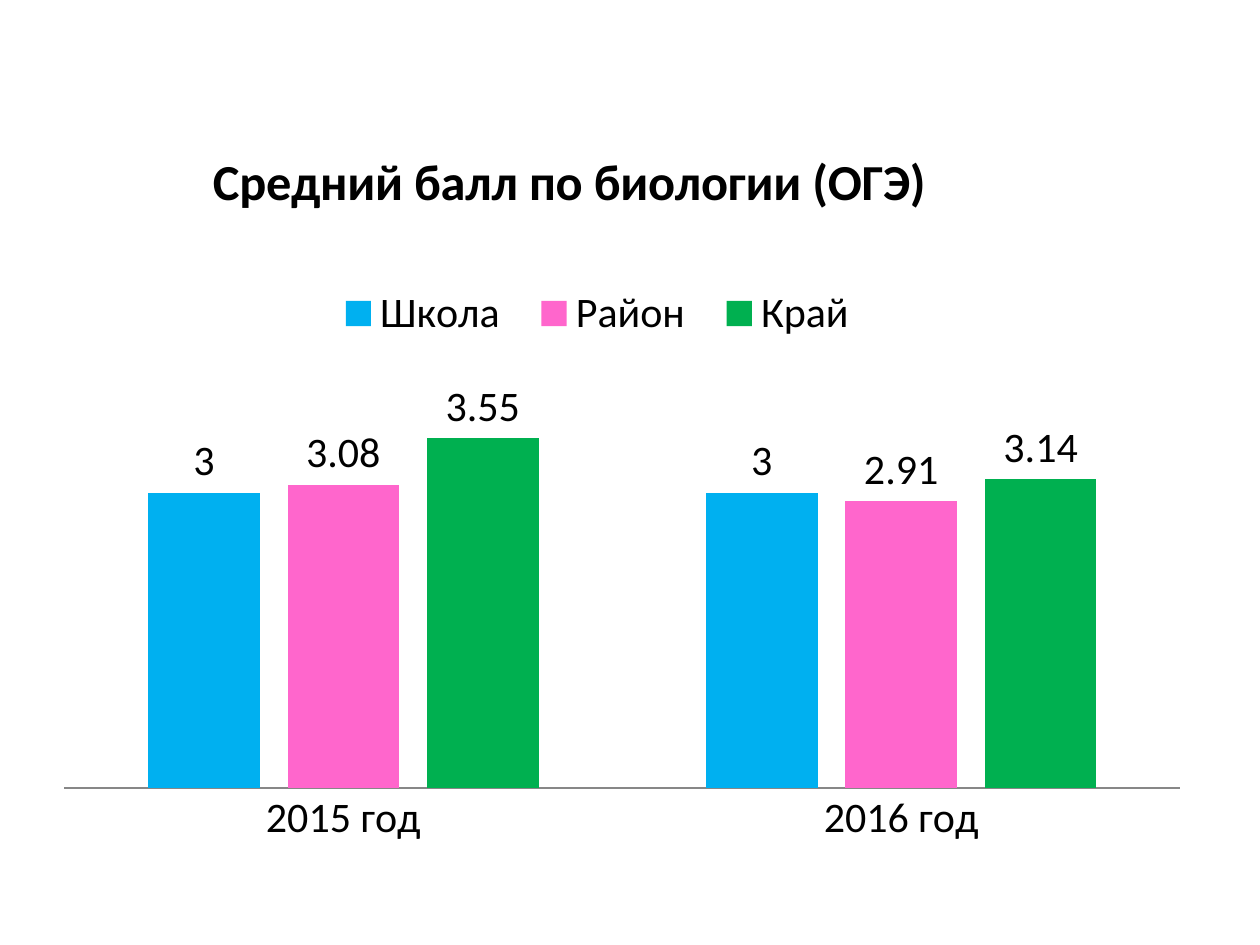
from dataclasses import dataclass

from pptx import Presentation
from pptx.chart.data import CategoryChartData
from pptx.dml.color import RGBColor
from pptx.enum.chart import XL_CHART_TYPE, XL_LABEL_POSITION, XL_LEGEND_POSITION, XL_TICK_MARK
from pptx.oxml import parse_xml
from pptx.oxml.ns import nsdecls
from pptx.util import Emu, Pt

COLUMNS = XL_CHART_TYPE.COLUMN_CLUSTERED
LABEL_ABOVE = XL_LABEL_POSITION.OUTSIDE_END
LEGEND_TOP = XL_LEGEND_POSITION.TOP
NO_TICK = XL_TICK_MARK.NONE
PX = 914400 // 126


@dataclass(frozen=True)
class Theme:
    """Colours and type sizes of the slide."""
    font: str = "Calibri"
    text: str = "000000"
    axis: str = "878787"
    school: str = "00B0F0"
    district: str = "FF66CC"
    region: str = "00B050"
    title_size: float = 28.8
    body_size: int = 24


THEME = Theme()
YEARS = ("2015 год", "2016 год")
SCORES = (
    ("Школа", (3, 3), THEME.school),
    ("Район", (3.08, 2.91), THEME.district),
    ("Край", (3.55, 3.14), THEME.region),
)


def px(n):
    """Turn whole pixels into EMU."""
    return Emu(n * PX)


def style_font(font, size, color=THEME.text, bold=False):
    """Set the face, size, colour and weight of a font."""
    font.name = THEME.font
    font.size = Pt(size)
    font.bold = bold
    font.color.rgb = RGBColor.from_string(color)


def add_text(tf, text, **fmt):
    """Write one formatted run into a text frame."""
    r = tf.paragraphs[0].add_run()
    r.text = text
    style_font(r.font, **fmt)


def set_layout(el, index, target="", **fractions):
    """Place a chart part at fractions of the chart box."""
    for old in el.xpath("c:layout"):
        el.remove(old)
    modes = "".join(f'<c:{k}Mode val="edge"/>' for k in "xy")
    sizes = "".join(f'<c:{k} val="{v:.3f}"/>' for k, v in fractions.items())
    el.insert(index, parse_xml(
        f'<c:layout {nsdecls("c")}><c:manualLayout>{target}{modes}{sizes}'
        "</c:manualLayout></c:layout>"))


def style_axes(chart):
    """Show only the category line and its labels."""
    cat, val = chart.category_axis, chart.value_axis
    cat.major_tick_mark = cat.minor_tick_mark = NO_TICK
    cat.format.line.color.rgb = RGBColor.from_string(THEME.axis)
    cat.format.line.width = Pt(0.75)
    style_font(cat.tick_labels.font, THEME.body_size)
    val.minimum_scale, val.maximum_scale = 0, 4
    val.has_major_gridlines = False
    val.visible = False


def style_columns(plot):
    """Colour each series and label its columns."""
    plot.gap_width, plot.overlap = 150, -25
    plot.vary_by_categories = False
    for series, (_, _, color) in zip(plot.series, SCORES):
        series.format.fill.solid()
        series.format.fill.fore_color.rgb = RGBColor.from_string(color)
        labels = series.data_labels
        labels.show_value = True
        labels.position = LABEL_ABOVE
        style_font(labels.font, THEME.body_size)


def add_score_chart(s, x, y, w, h):
    """Add the column chart of average scores in the given box."""
    data = CategoryChartData()
    data.categories = YEARS
    for name, values, _ in SCORES:
        data.add_series(name, values)
    chart = s.shapes.add_chart(COLUMNS, px(x), px(y), px(w), px(h), data).chart
    style_font(chart.font, THEME.body_size)
    chart.has_title = True
    add_text(chart.chart_title.text_frame, "Средний балл по биологии (ОГЭ)",
             size=THEME.title_size, bold=True)
    chart.has_legend = True
    chart.legend.position = LEGEND_TOP
    chart.legend.include_in_layout = False
    style_font(chart.legend.font, THEME.body_size)
    style_axes(chart)
    style_columns(chart.plots[0])
    title, legend, area = (
        chart.element.xpath(f"c:chart/c:{tag}")[0]
        for tag in ("title", "legend", "plotArea"))
    set_layout(title, 1, x=160 / w, y=42 / h)
    set_layout(legend, 1, x=274 / w, y=189 / h, w=558 / w, h=58 / h)
    set_layout(area, 0, '<c:layoutTarget val="inner"/>',
               x=21 / w, y=298 / h, w=1116 / w, h=394 / h)


def main():
    """Build and save the slide."""
    prs = Presentation()
    prs.slide_width, prs.slide_height = px(1260), px(945)
    s = prs.slides.add_slide(prs.slide_layouts[6])
    add_score_chart(s, 44, 96, 1142, 824)
    prs.save("out.pptx")


if __name__ == "__main__":
    main()
